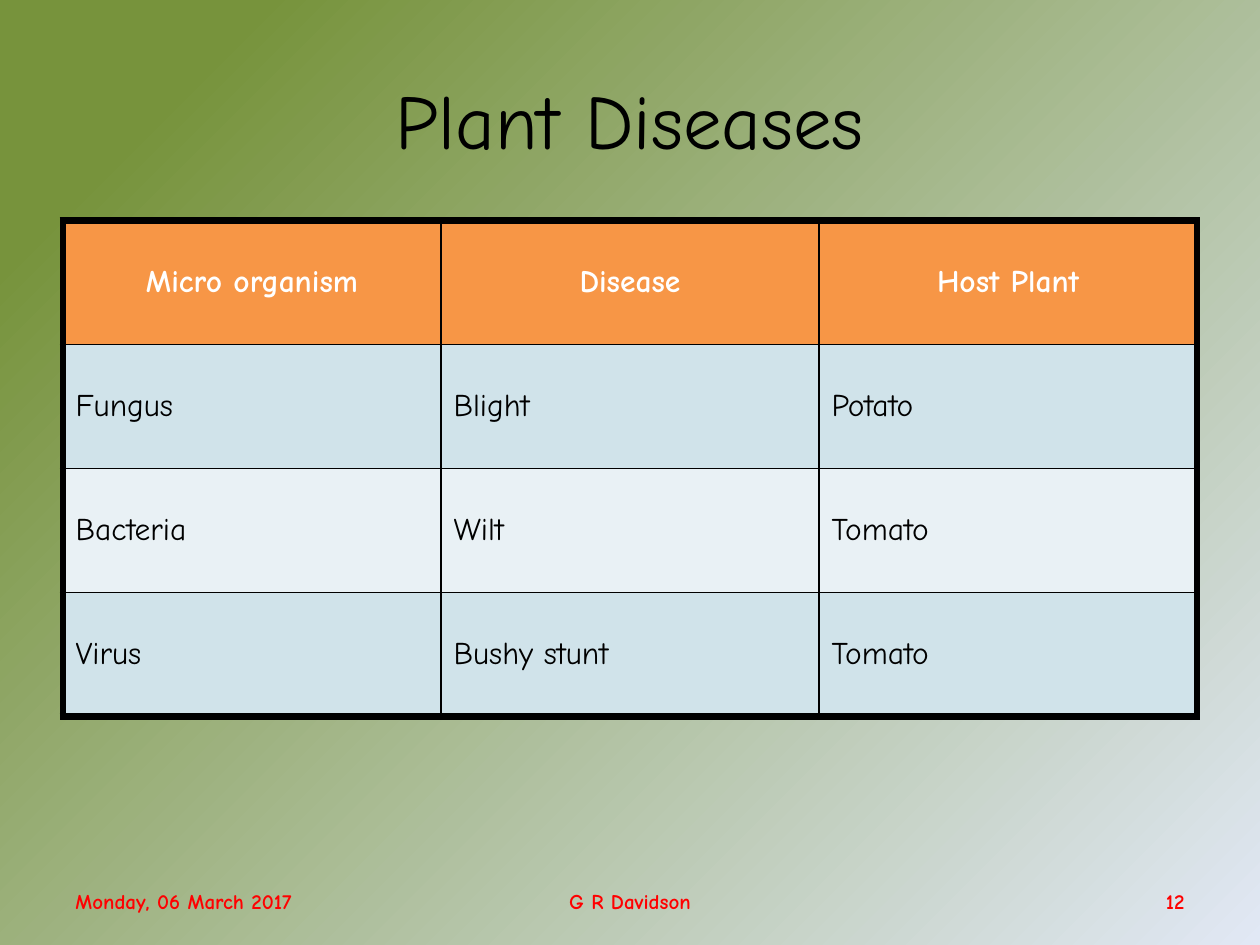
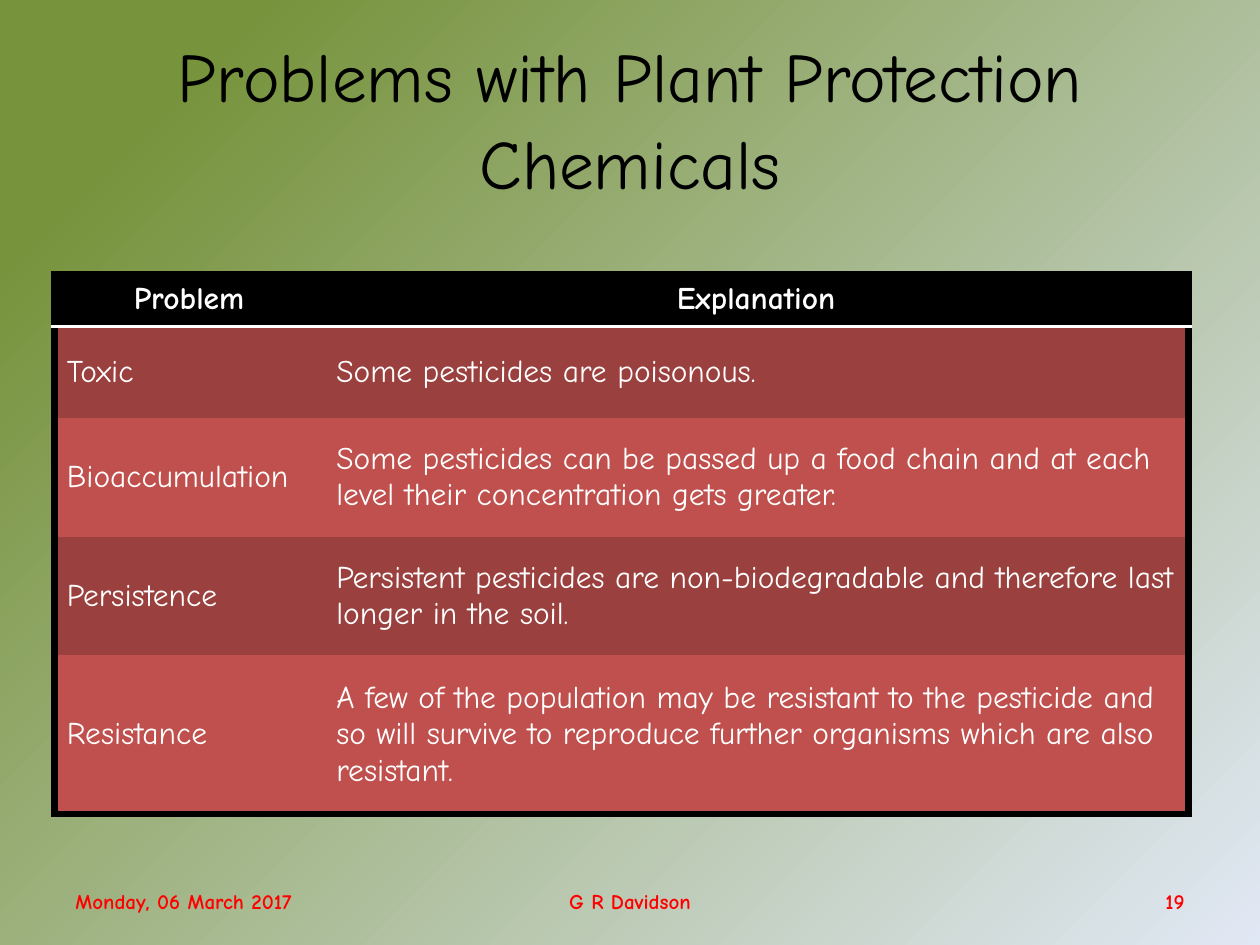
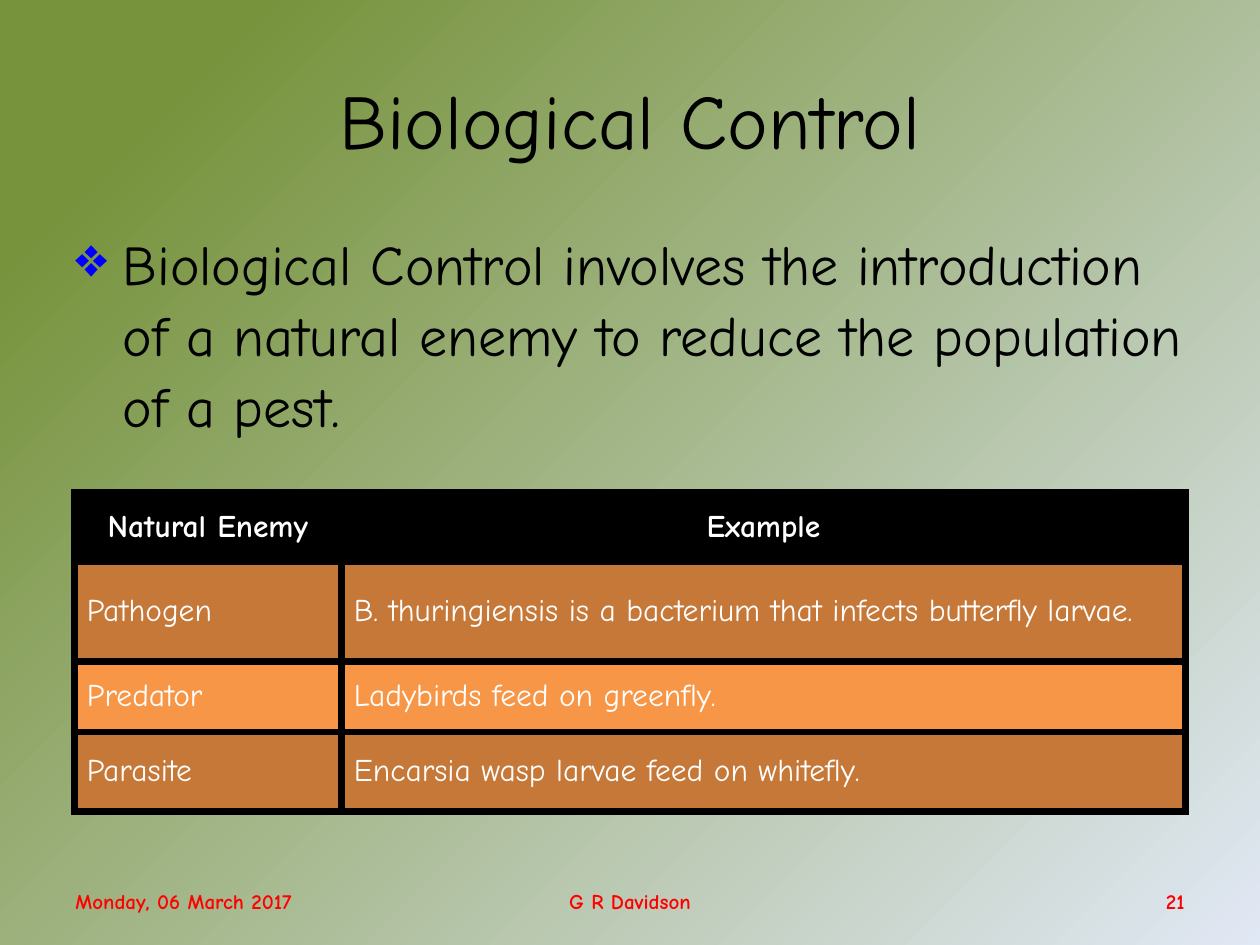
from lxml import etree
from pptx import Presentation
from pptx import util as u
from pptx.dml.color import RGBColor
from pptx.enum import text as t
from pptx.oxml import ns

FONT = "Comic Neue"
COLORS = {
    "leaf": "77933C", "mist": "E1E8F5", "black": "000000", "white": "FFFFFF",
    "red": "FF0000", "blue": "0000FF", "orange": "F79646", "rust": "C67838",
    "sky": "D0E3EA", "pale": "E9F1F5", "brick": "9A403E", "rose": "C0504D",
}
LEFT, MIDDLE = t.PP_ALIGN.LEFT, t.MSO_ANCHOR.MIDDLE
CENTER, RIGHT = t.PP_ALIGN.CENTER, t.PP_ALIGN.RIGHT
OUTLINE = 4.5


def rgb(name):
    return RGBColor.from_string(COLORS[name])


def add_color(parent, name):
    etree.SubElement(parent, ns.qn("a:srgbClr"), val=COLORS[name])


class SlideBuilder:
    """Holds the deck's style and the slide being built."""

    def __init__(self):
        self.deck = Presentation()
        self.deck.slide_width, self.deck.slide_height = u.Pt(720), u.Pt(540)
        self.slide = None
        # Diagonal gradient shared by all slides
        fill = self.deck.slide_master.background.fill
        fill.gradient()
        fill.gradient_angle = 315
        for stop, name, place in zip(fill.gradient_stops, ("leaf", "mist"), (0.12, 1)):
            stop.color.rgb, stop.position = rgb(name), place

    def start(self, title, number, size=44):
        self.slide = self.deck.slides.add_slide(self.deck.slide_layouts[6])
        para = self.text((36, 21.6, 648, 90), title, size, align=CENTER)
        para.line_spacing = 1.05
        # Footer: date, author, slide number
        for left, width, words, align in (
            (36, 239, "Monday, 06 March 2017", LEFT),
            (246, 228, "G R Davidson", CENTER),
            (516, 168, str(number), RIGHT),
        ):
            self.text((left, 500.4, width, 28.8), words, 12, "red", True, align)

    def add_span(self, para, words, size, color, bold, align):
        para.alignment = align
        span = para.add_run()
        span.text = words
        span.font.name, span.font.size = FONT, u.Pt(size)
        span.font.bold, span.font.color.rgb = bold, rgb(color)

    def text(self, place, words, size, color="black", bold=False, align=LEFT, anchor=MIDDLE):
        box = self.slide.shapes.add_textbox(*map(u.Pt, place))
        frame = box.text_frame
        frame.word_wrap, frame.vertical_anchor = True, anchor
        para = frame.paragraphs[0]
        self.add_span(para, words, size, color, bold, align)
        return para

    def bullet(self, place, words):
        para = self.text(place, words, 32, anchor=t.MSO_ANCHOR.TOP)
        para.line_spacing, para.space_before = 1.05, u.Pt(6.4)
        props = para._p.get_or_add_pPr()
        props.set("marL", str(u.Pt(27)))
        props.set("indent", str(u.Pt(-27)))
        add_color(etree.SubElement(props, ns.qn("a:buClr")), "blue")
        etree.SubElement(props, ns.qn("a:buChar"), char="❖")

    def borders(self, cell, lines):
        """Draw (colour, width) lines in the order left, right, top, bottom."""
        props = cell._tc.get_or_add_tcPr()
        for index, (side, (color, width)) in enumerate(zip("LRTB", lines)):
            line = etree.Element(ns.qn(f"a:ln{side}"), w=str(u.Pt(width)))
            if width:
                add_color(etree.SubElement(line, ns.qn("a:solidFill")), color)
            else:
                etree.SubElement(line, ns.qn("a:noFill"))
            props.insert(index, line)

    def table(self, corner, widths, heights, rows, head, bands, ink, inner,
              head_line=None, head_anchor=MIDDLE):
        """Header row, banded body, thick outline and given inner lines."""
        size = (sum(widths), sum(heights))
        grid = self.slide.shapes.add_table(
            len(rows), len(widths), *map(u.Pt, corner + size)).table
        grid.horz_banding = False
        for column, width in zip(grid.columns, widths):
            column.width = u.Pt(width)
        outer, inside = ("black", OUTLINE), ("black", inner)
        # Horizontal lines from top to bottom, vertical ones from left to right
        across = [outer, head_line or inside] + [inside] * (len(rows) - 2) + [outer]
        down = [outer] + [inside] * (len(widths) - 1) + [outer]
        for r, (height, words) in enumerate(zip(heights, rows)):
            grid.rows[r].height = u.Pt(height)
            is_head = r == 0
            for c, word in enumerate(words):
                cell = grid.cell(r, c)
                cell.vertical_anchor = head_anchor if is_head else MIDDLE
                cell.fill.solid()
                cell.fill.fore_color.rgb = rgb(head if is_head else bands[(r - 1) % 2])
                self.borders(cell, (down[c], down[c + 1], across[r], across[r + 1]))
                self.add_span(cell.text_frame.paragraphs[0], word, 18,
                              "white" if is_head else ink, is_head,
                              CENTER if is_head else LEFT)


def main():
    builder = SlideBuilder()

    # Plant diseases
    builder.start("Plant Diseases", 12)
    builder.table(
        (36, 126), [216] * 3, [70.9] * 4,
        [("Micro organism", "Disease", "Host Plant"),
         ("Fungus", "Blight", "Potato"),
         ("Bacteria", "Wilt", "Tomato"),
         ("Virus", "Bushy stunt", "Tomato")],
        head="orange", bands=("sky", "pale"), ink="black", inner=1)

    # Problems with chemicals
    builder.start("Problems with Plant Protection Chemicals", 19, size=39.6)
    builder.table(
        (31, 157), [154, 494], [29.5, 52.6, 67.7, 67.7, 90.7],
        [("Problem", "Explanation"),
         ("Toxic", "Some pesticides are poisonous."),
         ("Bioaccumulation", "Some pesticides can be passed up a food chain and "
          "at each level their concentration gets greater."),
         ("Persistence", "Persistent pesticides are non-biodegradable and "
          "therefore last longer in the soil."),
         ("Resistance", "A few of the population may be resistant to the pesticide and "
          "so will survive to reproduce further organisms which are also resistant.")],
        head="black", bands=("brick", "rose"), ink="white", inner=0,
        head_line=("white", 2), head_anchor=t.MSO_ANCHOR.TOP)

    # Biological control
    builder.start("Biological Control", 21)
    builder.bullet((36, 126, 648, 144), "Biological Control involves the introduction of "
                   "a natural enemy to reduce the population of a pest.")
    builder.table(
        (42.5, 281.5), [152.6, 482.4], [39.6, 56.9, 40.3, 45.4],
        [("Natural Enemy", "Example"),
         ("Pathogen", "B. thuringiensis is a bacterium that infects butterfly larvae."),
         ("Predator", "Ladybirds feed on greenfly."),
         ("Parasite", "Encarsia wasp larvae feed on whitefly.")],
        head="black", bands=("rust", "orange"), ink="white", inner=OUTLINE)

    builder.deck.save("out.pptx")


if __name__ == "__main__":
    main()
